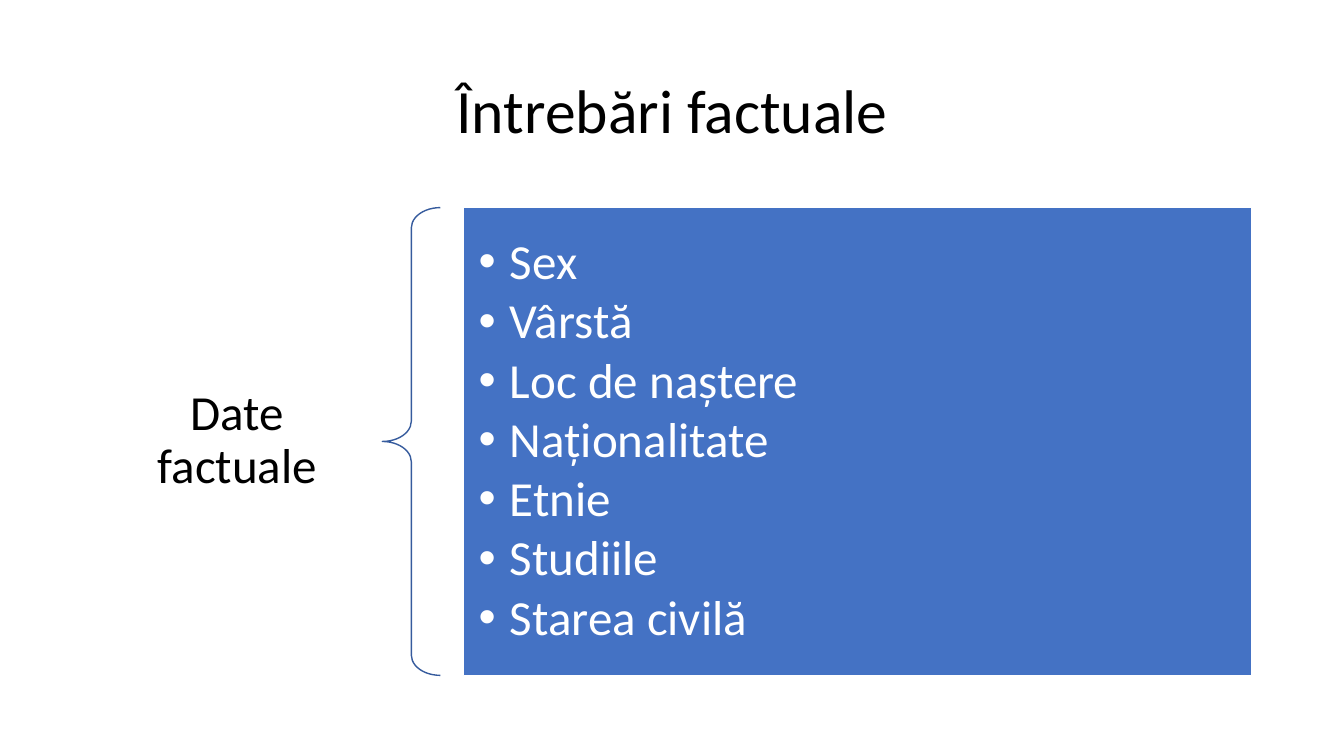
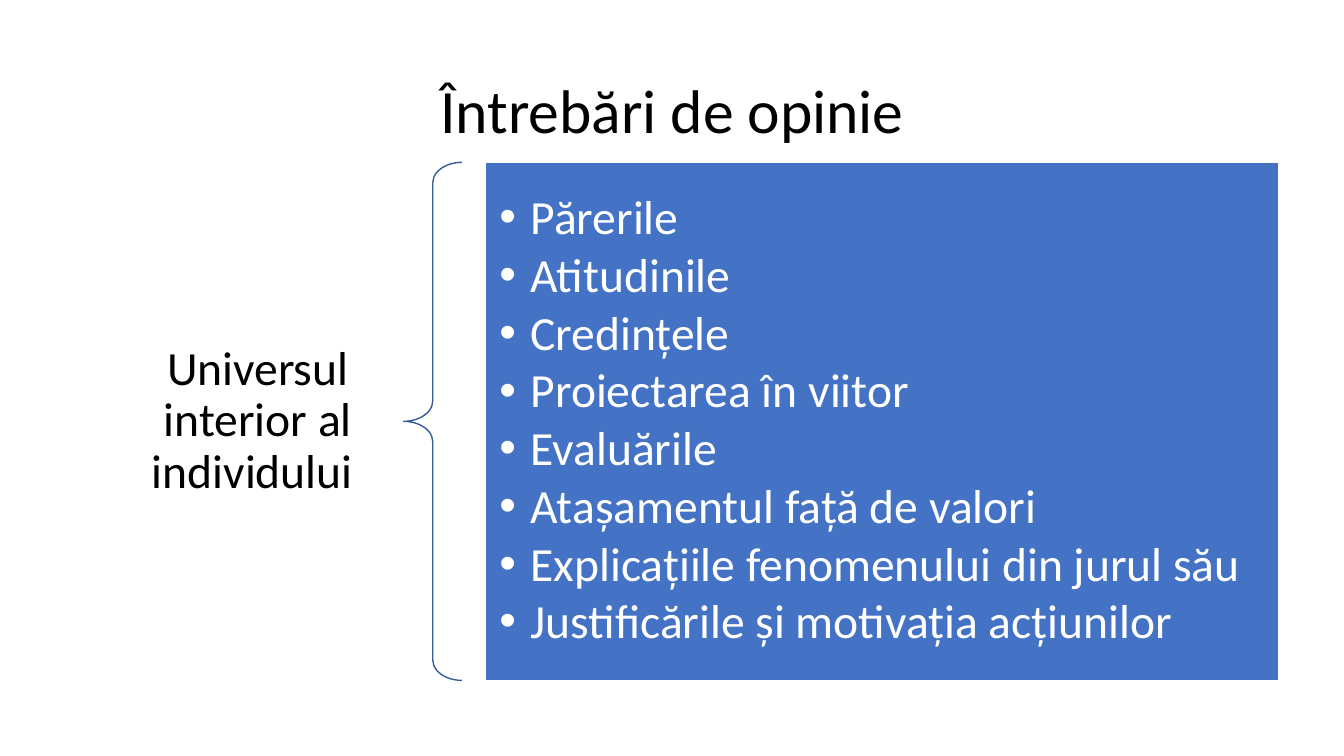
from pptx import Presentation
from pptx.dml.color import RGBColor
from pptx.enum.shapes import MSO_SHAPE
from pptx.enum.text import MSO_ANCHOR, MSO_AUTO_SIZE, PP_ALIGN
from pptx.util import Inches, Pt

# Shared look
WIDTH, HEIGHT = Inches(13.33), Inches(7.5)
FONT = "Calibri"
BLACK, WHITE, BLUE, BRACE_BLUE = "000000", "FFFFFF", "4472C4", "365B9D"
TITLE_AREA = (6.9, 5.33, 86.25, 19.33)  # percent of the slide
LABEL, BRACE, GAP, PANEL = 0.25, 0.05, 0.02, 0.68  # shares of the diagram width
BULLET_INDENT = Inches(0.31)

TOPICS = [
    {
        "title": "Întrebări factuale",
        "area": (6.9, 27.47, 86.2, 61.87),
        "size": 35,
        "inset": 0.15,
        "label": "Date factuale",
        "items": ["Sex", "Vârstă", "Loc de naștere", "Naționalitate",
                  "Etnie", "Studiile", "Starea civilă"],
    },
    {
        "title": "Întrebări de opinie",
        "area": (8.33, 21.47, 86.8, 68.53),
        "size": 34,
        "inset": 0.14,
        "label": "Universul interior al individului ",
        "items": ["Părerile", "Atitudinile", "Credințele",
                  "Proiectarea în viitor", "Evaluările",
                  "Atașamentul față de valori",
                  "Explicațiile fenomenului din jurul său",
                  "Justificările și motivația acțiunilor"],
    },
]


def color(hex_value):
    return RGBColor.from_string(hex_value)


def to_slide(area):
    """Turn percentages of the slide into lengths."""
    return [round(share * side / 100)
            for share, side in zip(area, (WIDTH, HEIGHT, WIDTH, HEIGHT))]


def place(shape, left, top, width, height):
    box = {"left": left, "top": top, "width": width, "height": height}
    for side, length in box.items():
        setattr(shape, side, round(length))


def write(shape, lines, size, ink, align, inset_x=0.1, inset_y=0.05, after=0):
    frame = shape.text_frame
    frame_format = {
        "word_wrap": True,
        "auto_size": MSO_AUTO_SIZE.NONE,
        "vertical_anchor": MSO_ANCHOR.MIDDLE,
        "margin_left": Inches(inset_x), "margin_right": Inches(inset_x),
        "margin_top": Inches(inset_y), "margin_bottom": Inches(inset_y),
    }
    for name, value in frame_format.items():
        setattr(frame, name, value)
    frame.text = "\n".join(lines)
    paragraph_format = {"alignment": align, "line_spacing": 0.9,
                        "space_before": Pt(0), "space_after": Pt(after)}
    for paragraph in frame.paragraphs:
        for name, value in paragraph_format.items():
            setattr(paragraph, name, value)
        for run in paragraph.runs:
            run.font.name, run.font.size = FONT, Pt(size)
            run.font.color.rgb = color(ink)


def outline(shape, ink):
    shape.line.color.rgb = color(ink)
    shape.line.width = Pt(1)


def add_label(slide, topic, left, top, width, height):
    label = slide.shapes.add_textbox(left, top, round(width), height)
    write(label, [topic["label"]], topic["size"], BLACK, PP_ALIGN.CENTER,
          inset_x=0.26, inset_y=0.1)


def add_brace(slide, left, top, width, height):
    brace = slide.shapes.add_shape(MSO_SHAPE.LEFT_BRACE, round(left), top,
                                   round(width), height)
    brace.shadow.inherit = False
    brace.fill.background()
    brace.adjustments[0] = 0.35
    outline(brace, BRACE_BLUE)


def fill_panel(panel, topic, *box):
    place(panel, *box)
    panel.fill.solid()
    panel.fill.fore_color.rgb = color(BLUE)
    outline(panel, WHITE)
    write(panel, topic["items"], topic["size"], WHITE, PP_ALIGN.LEFT,
          topic["inset"], topic["inset"], after=4.5)
    # Hanging bullets
    for paragraph in panel.text_frame.paragraphs:
        properties = paragraph._p.get_or_add_pPr()
        properties.set("marL", str(BULLET_INDENT))
        properties.set("indent", str(-BULLET_INDENT))


def add_topic(deck, topic):
    slide = deck.slides.add_slide(deck.slide_layouts[1])
    title, panel = slide.placeholders
    place(title, *to_slide(TITLE_AREA))
    write(title, [topic["title"]], 44, BLACK, PP_ALIGN.CENTER)

    # Label, brace and list side by side
    left, top, width, height = to_slide(topic["area"])
    brace_left = left + LABEL * width
    panel_left = brace_left + (BRACE + GAP) * width
    add_label(slide, topic, left, top, LABEL * width, height)
    add_brace(slide, brace_left, top, BRACE * width, height)
    fill_panel(panel, topic, panel_left, top, PANEL * width, height)


def main():
    deck = Presentation()
    deck.slide_width, deck.slide_height = WIDTH, HEIGHT
    for topic in TOPICS:
        add_topic(deck, topic)
    deck.save("out.pptx")


if __name__ == "__main__":
    main()
